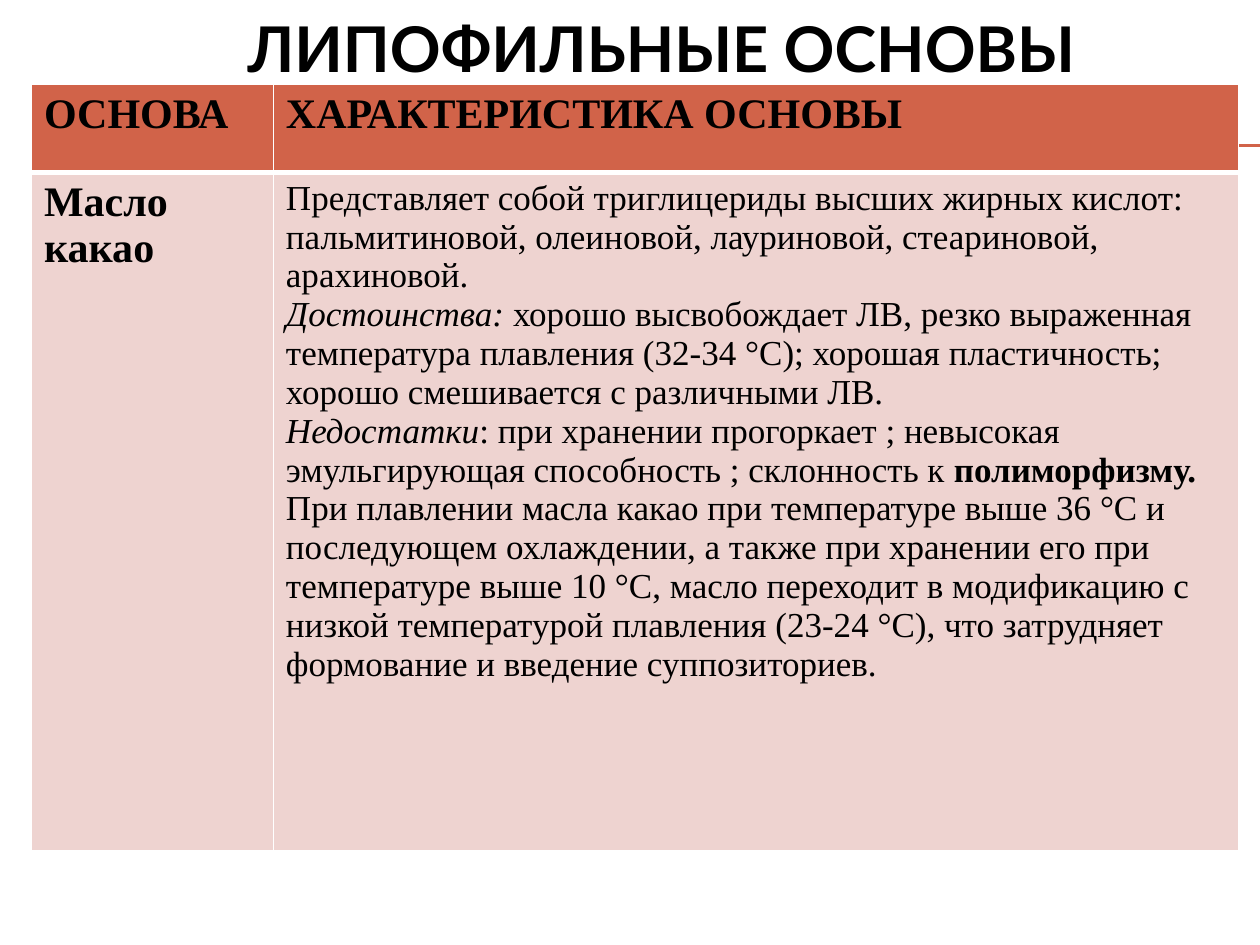
from dataclasses import dataclass

import lxml.etree
import pptx
import pptx.dml.color
import pptx.enum.shapes
import pptx.enum.text
import pptx.oxml.ns
import pptx.util

Inches = pptx.util.Inches


@dataclass(frozen=True)
class Theme:
    """Colours, fonts and type sizes of the slide."""
    ink: str = "000000"
    accent: str = "D16349"
    body_fill: str = "EED3D0"
    border: str = "FFFFFF"
    title_font: str = "Lato"
    table_font: str = "Times New Roman"
    title_size: int = 36
    label_size: int = 24
    body_size: int = 20


THEME = Theme()

HEADERS = ["ОСНОВА", "ХАРАКТЕРИСТИКА ОСНОВЫ"]
BASE_NAME = "Масло какао"
DESCRIPTION = [
    [("Представляет собой триглицериды высших жирных кислот: пальмитиновой, "
      "олеиновой, лауриновой, стеариновой, арахиновой.", "")],
    [("Достоинства:", "i"),
     (" хорошо высвобождает ЛВ, резко выраженная температура плавления "
      "(32-34 °С); хорошая пластичность; хорошо смешивается с различными ЛВ.", "")],
    [("Недостатки", "i"),
     (": при хранении прогоркает ; невысокая эмульгирующая способность ; "
      "склонность к ", ""),
     ("полиморфизму.", "b")],
    [("При плавлении масла какао при температуре выше 36 °С и последующем "
      "охлаждении, а также при хранении его при температуре выше 10 °С, масло "
      "переходит в модификацию с низкой температурой плавления (23-24 °С), что "
      "затрудняет формование и введение суппозиториев.", "")],
]


def rgb(value):
    """Turn a hex string into a colour."""
    return pptx.dml.color.RGBColor.from_string(value)


def write(frame, paragraphs, font, size, align=None):
    """Fill a text frame with paragraphs of (text, style) runs."""
    for index, runs in enumerate(paragraphs):
        para = frame.add_paragraph() if index else frame.paragraphs[0]
        para.alignment = align
        for text, style in runs:
            span = para.add_run()
            span.text = text
            span.font.name = font
            span.font.size = pptx.util.Pt(size)
            span.font.bold = "b" in style
            span.font.italic = "i" in style
            span.font.color.rgb = rgb(THEME.ink)


def add_rules(page, left, top, width, gap):
    """Draw the pair of thin rules that run to the page edge."""
    for y in (top, top + gap):
        rule = page.shapes.add_connector(
            pptx.enum.shapes.MSO_CONNECTOR.STRAIGHT, left, y, left + width, y)
        rule.line.color.rgb = rgb(THEME.accent)
        rule.line.width = pptx.util.Pt(0.75)
        lxml.etree.SubElement(rule._element.spPr, pptx.oxml.ns.qn("a:effectLst"))


def place_title(page, left, top, width, height):
    """Move and fill the title placeholder."""
    title = page.shapes.title
    title.left, title.top, title.width, title.height = left, top, width, height
    frame = title.text_frame
    frame.word_wrap = True
    frame.auto_size = pptx.enum.text.MSO_AUTO_SIZE.NONE
    frame.vertical_anchor = pptx.enum.text.MSO_ANCHOR.MIDDLE
    write(frame, [[("ЛИПОФИЛЬНЫЕ ОСНОВЫ", "b")]], THEME.title_font,
          THEME.title_size, pptx.enum.text.PP_ALIGN.CENTER)


def set_borders(cell, widths):
    """Give a cell solid borders with a width in points for each side."""
    qn = pptx.oxml.ns.qn
    properties = cell._tc.get_or_add_tcPr()
    for side, width in widths.items():
        line = lxml.etree.SubElement(
            properties, qn(f"a:ln{side}"), w=str(pptx.util.Pt(width)))
        fill = lxml.etree.SubElement(line, qn("a:solidFill"))
        lxml.etree.SubElement(fill, qn("a:srgbClr"), val=THEME.border)


def add_bases_table(page, left, top, width, height):
    """Build the table of bases within the given box."""
    table = page.shapes.add_table(2, 2, left, top, width, height).table
    table.first_row = table.horz_banding = False
    name_width, header_height = Inches(1.92), Inches(0.7)
    table.columns[0].width = name_width
    table.columns[1].width = width - name_width
    table.rows[0].height = header_height
    table.rows[1].height = height - header_height
    label, body = THEME.label_size, THEME.body_size
    rows = [
        (THEME.accent, {"B": 3}, [([[(text, "b")]], label) for text in HEADERS]),
        (THEME.body_fill, {"T": 3},
         [([[(BASE_NAME, "b")]], label), (DESCRIPTION, body)]),
    ]
    for row, (fill, heavy, contents) in zip(table.rows, rows):
        for cell, (paragraphs, size) in zip(row.cells, contents):
            set_borders(cell, dict.fromkeys("LRTB", 1) | heavy)
            cell.fill.solid()
            cell.fill.fore_color.rgb = rgb(fill)
            write(cell.text_frame, paragraphs, THEME.table_font, size)


def main():
    """Build and save the slide."""
    deck = pptx.Presentation()
    deck.slide_width, deck.slide_height = Inches(10), Inches(7.5)
    page = deck.slides.add_slide(deck.slide_layouts.get_by_name("Title Only"))
    page.background.fill.solid()
    page.background.fill.fore_color.rgb = rgb(THEME.border)
    add_rules(page, Inches(0.56), Inches(1.15), Inches(9.44), Inches(0.01))
    place_title(page, Inches(0.5), Inches(0), Inches(9.5), Inches(0.75))
    add_bases_table(page, Inches(0.25), Inches(0.67), Inches(9.58), Inches(6.08))
    deck.save("out.pptx")


if __name__ == "__main__":
    main()
